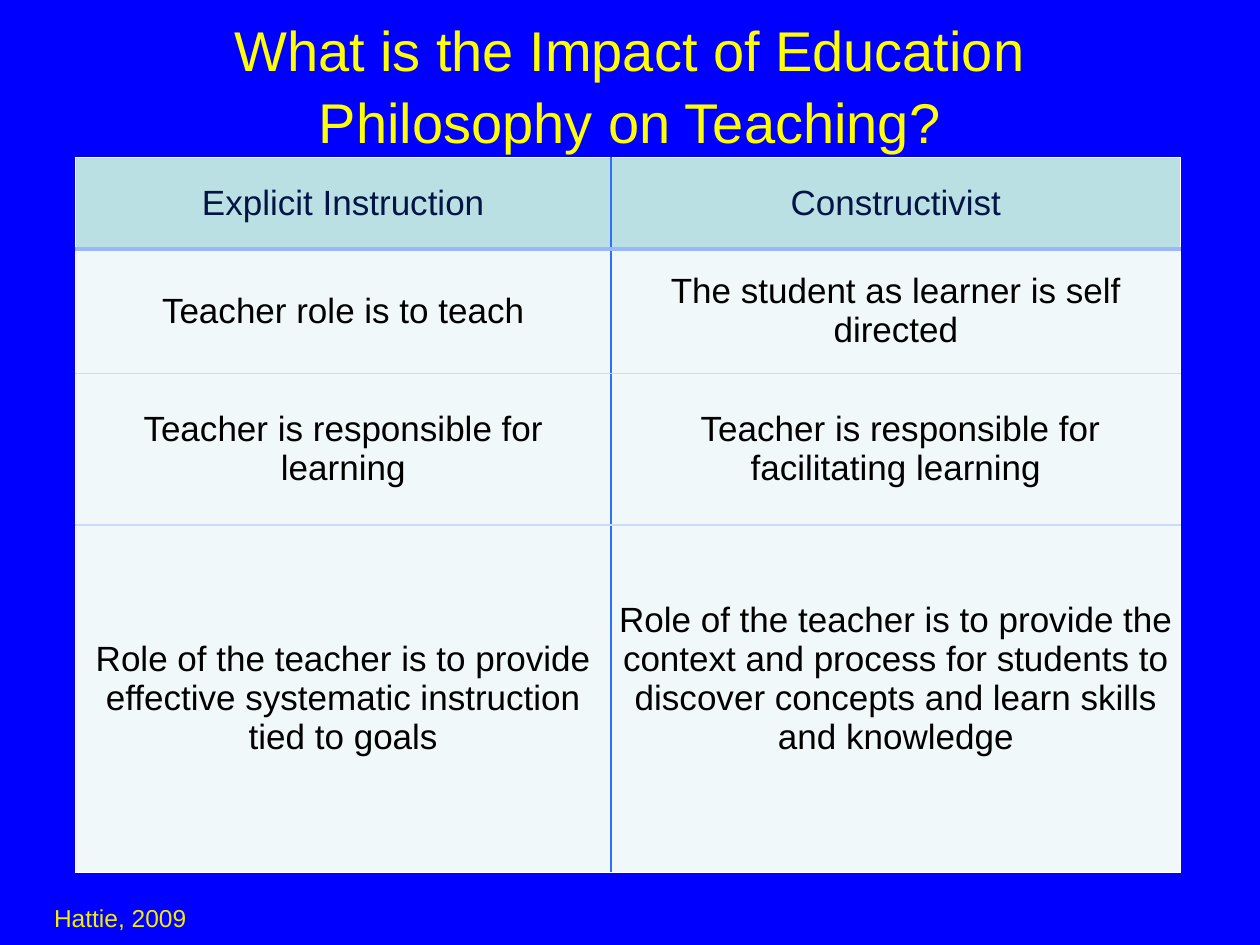
"""Build a slide comparing explicit instruction with constructivist teaching."""
from dataclasses import dataclass

import pptx
import pptx.dml.color
import pptx.enum.text
import pptx.oxml
import pptx.oxml.ns
import pptx.util
from pptx.util import Cm

WHITE = "FFFFFF"
DIVIDER = "2E6FFD"
COLUMN_WIDTHS = (10.8, 11.48)
CELL_MARGIN = 0.15


@dataclass(frozen=True)
class Border:
    color: str
    width: float = 1


@dataclass(frozen=True)
class Row:
    texts: tuple[str, str]
    height: float
    bottom: Border
    fill: str = "F0F8F9"
    color: str = "000000"
    extra_margins: tuple[float, float] = (0, 0)


HEADER_RULE = Border("98B7FE", 3)
ROW_RULE = Border("CADBFE")
OUTLINE = Border(WHITE)

ROWS = (
    Row(("Explicit Instruction", "Constructivist"), 1.85, HEADER_RULE, "BBE0E3", "001445"),
    Row(("Teacher role is to teach", "The student as learner is self directed"), 2.51, ROW_RULE),
    Row(
        ("Teacher is responsible for learning", " Teacher is responsible for facilitating learning"),
        3.05,
        ROW_RULE,
    ),
    Row(
        (
            "Role of the teacher is to provide effective systematic instruction tied to goals",
            "Role of the teacher is to provide the context and process for students "
            "to discover concepts and learn skills and knowledge",
        ),
        7.01,
        OUTLINE,
        extra_margins=(0, 0.8),
    ),
)


def rgb(color: str) -> pptx.dml.color.RGBColor:
    """Turn a hex string into a colour."""
    return pptx.dml.color.RGBColor.from_string(color)


def write_text(frame, text: str, size: float, color: str, centered: bool, margin: float) -> None:
    """Fill a text frame with one formatted paragraph."""
    frame.text = text
    frame.word_wrap = True
    frame.margin_left = frame.margin_right = Cm(margin)
    frame.margin_top = frame.margin_bottom = Cm(margin)
    alignment = pptx.enum.text.PP_ALIGN
    paragraph = frame.paragraphs[0]
    paragraph.alignment = alignment.CENTER if centered else alignment.LEFT
    paragraph.font.name = "Arial"
    paragraph.font.size = pptx.util.Pt(size)
    paragraph.font.color.rgb = rgb(color)


def set_borders(cell, left: Border, right: Border, top: Border, bottom: Border) -> None:
    """Draw the four borders of a table cell."""
    properties = cell._tc.get_or_add_tcPr()
    sides = (("L", left), ("R", right), ("T", top), ("B", bottom))
    for position, (side, border) in enumerate(sides):
        line = pptx.oxml.parse_xml(
            f'<a:ln{side} {pptx.oxml.ns.nsdecls("a")} w="{pptx.util.Pt(border.width)}">'
            f'<a:solidFill><a:srgbClr val="{border.color}"/></a:solidFill></a:ln{side}>'
        )
        properties.insert(position, line)


def add_title(slide) -> None:
    """Place and format the slide title."""
    title = slide.shapes.title
    title.left, title.top, title.width, title.height = Cm(1.9), Cm(0), Cm(21.6), Cm(3.35)
    frame = title.text_frame
    write_text(
        frame, "What is the Impact of Education Philosophy on Teaching?", 32, "FFFF00", True, 0.1
    )
    frame.vertical_anchor = pptx.enum.text.MSO_ANCHOR.MIDDLE
    frame.auto_size = pptx.enum.text.MSO_AUTO_SIZE.NONE
    frame.paragraphs[0].line_spacing = 1.06


def add_comparison(slide) -> None:
    """Add the table that compares the two philosophies."""
    height = sum(row.height for row in ROWS)
    table = slide.shapes.add_table(
        len(ROWS), len(COLUMN_WIDTHS), Cm(1.52), Cm(3.17), Cm(sum(COLUMN_WIDTHS)), Cm(height)
    ).table
    for column, width in zip(table.columns, COLUMN_WIDTHS):
        column.width = Cm(width)
    divider = Border(DIVIDER)
    top = OUTLINE
    for row_index, row in enumerate(ROWS):
        table.rows[row_index].height = Cm(row.height)
        for column_index, text in enumerate(row.texts):
            cell = table.cell(row_index, column_index)
            write_text(cell.text_frame, text, 20, row.color, True, CELL_MARGIN)
            cell.margin_left = cell.margin_right = cell.margin_top = Cm(CELL_MARGIN)
            cell.margin_bottom = Cm(CELL_MARGIN + row.extra_margins[column_index])
            cell.vertical_anchor = pptx.enum.text.MSO_ANCHOR.MIDDLE
            cell.fill.solid()
            cell.fill.fore_color.rgb = rgb(row.fill)
            left, right = (OUTLINE, divider) if column_index == 0 else (divider, OUTLINE)
            set_borders(cell, left, right, top, row.bottom)
        top = row.bottom


def add_citation(slide) -> None:
    """Add the source below the table."""
    box = slide.shapes.add_textbox(Cm(1.09), Cm(18.2), Cm(3), Cm(0.8))
    write_text(box.text_frame, "Hattie, 2009", 14, "F3EB00", False, 0)


def main() -> None:
    """Build and save the presentation."""
    presentation = pptx.Presentation()
    presentation.slide_width, presentation.slide_height = Cm(25.4), Cm(19.05)
    slide = presentation.slides.add_slide(presentation.slide_layouts[5])
    slide.background.fill.solid()
    slide.background.fill.fore_color.rgb = rgb("0000FF")
    add_title(slide)
    add_citation(slide)
    add_comparison(slide)
    presentation.save("out.pptx")


if __name__ == "__main__":
    main()
